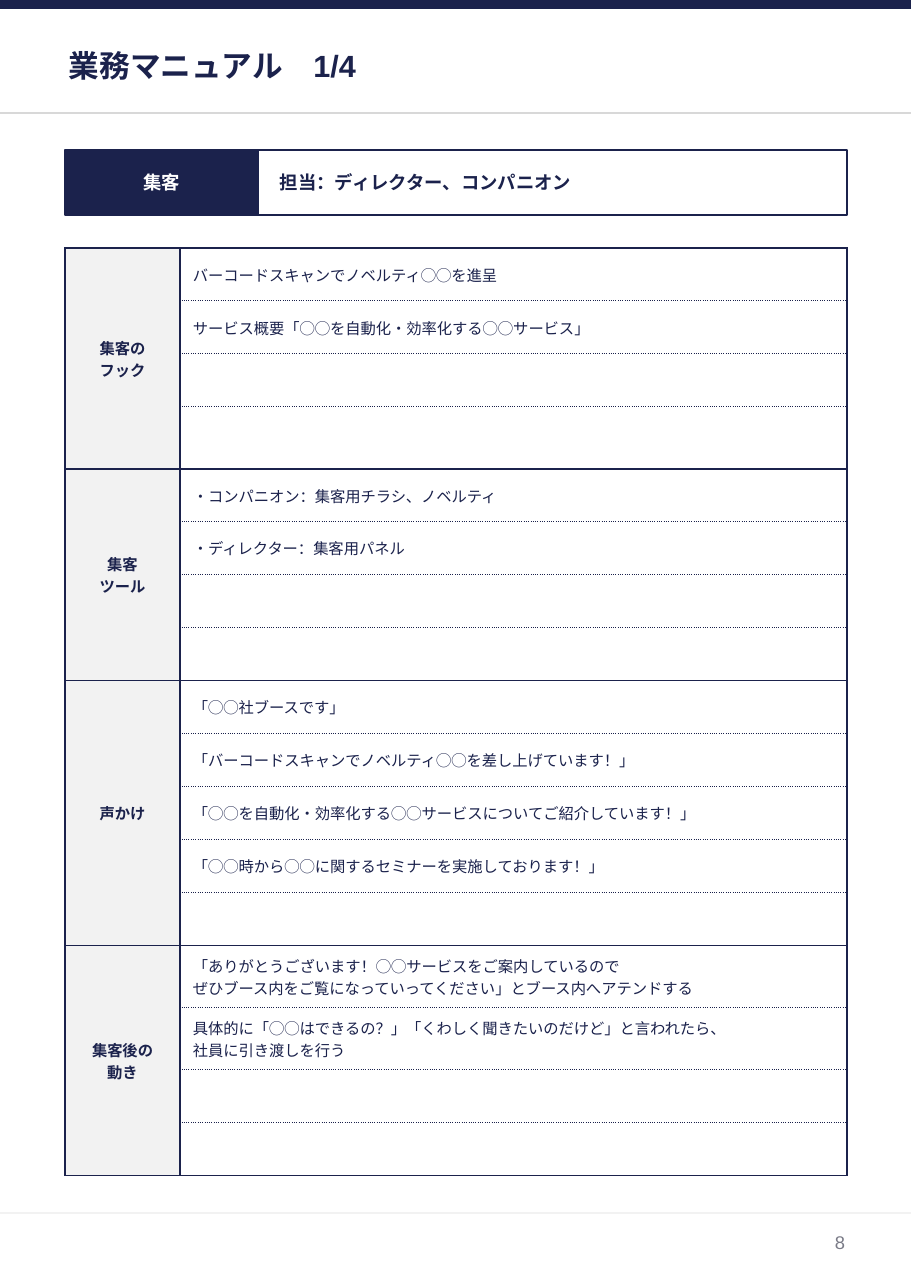
from lxml import etree
from pptx import Presentation
from pptx import util as u
from pptx.dml.color import RGBColor
from pptx.enum import shapes, text
from pptx.oxml import ns

NAVY = RGBColor(0x1B, 0x22, 0x4C)
WHITE = RGBColor(0xFF, 0xFF, 0xFF)
PALE = RGBColor(0xF2, 0xF2, 0xF2)
RULE = RGBColor(0xD8, 0xD8, 0xD8)
GREY = RGBColor(0x7A, 0x7B, 0x87)

PAGE_W, PAGE_H = 911, 1288
TITLE = "業務マニュアル　1/4"
STAGE = "集客"
STAFF = "担当：ディレクター、コンパニオン"
PAGE_NUMBER = "8"
ROW, TALL = 53, 62
SECTIONS = [
    (["集客の", "フック"], [
        (ROW, ["バーコードスキャンでノベルティ◯◯を進呈"]),
        (ROW, ["サービス概要「◯◯を自動化・効率化する◯◯サービス」"]),
        (ROW, []),
        (TALL, []),
    ]),
    (["集客", "ツール"], [
        (ROW, ["・コンパニオン：集客用チラシ、ノベルティ"]),
        (ROW, ["・ディレクター：集客用パネル"]),
        (ROW, []),
        (ROW, []),
    ]),
    (["声かけ"], [
        (ROW, ["「◯◯社ブースです」"]),
        (ROW, ["「バーコードスキャンでノベルティ◯◯を差し上げています！」"]),
        (ROW, ["「◯◯を自動化・効率化する◯◯サービスについてご紹介しています！」"]),
        (ROW, ["「◯◯時から◯◯に関するセミナーを実施しております！」"]),
        (ROW, []),
    ]),
    (["集客後の", "動き"], [
        (TALL, ["「ありがとうございます！◯◯サービスをご案内しているので",
                "ぜひブース内をご覧になっていってください」とブース内へアテンドする"]),
        (TALL, ["具体的に「◯◯はできるの？」「くわしく聞きたいのだけど」と言われたら、",
                "社員に引き渡しを行う"]),
        (ROW, []),
        (ROW, []),
    ]),
]
LEFT, TABLE_TOP = 65, 248
LABEL_W, DETAIL_W = 115, 667
BANNER_TOP, BANNER_H, STAGE_W = 150, 65, 193
BANNER_W = LABEL_W + DETAIL_W
SOLID, DOTTED = (1, "solid"), (0.75, "sysDot")


def px(length):
    return u.Emu(length * 8298)


def set_text(frame, lines, size, color, bold, align=text.PP_ALIGN.LEFT):
    for index, line in enumerate(lines or [""]):
        para = frame.paragraphs[0] if index == 0 else frame.add_paragraph()
        para.alignment = align
        target = para
        if line:
            target = para.add_run()
            target.text = line
        look = {"name": "Arial", "size": u.Pt(size), "bold": bold}
        for name, value in look.items():
            setattr(target.font, name, value)
        target.font.color.rgb = color


def set_frame(frame, inset=4):
    layout = {"word_wrap": True, "vertical_anchor": text.MSO_ANCHOR.MIDDLE,
              "margin_left": px(inset), "margin_right": px(4),
              "margin_top": px(4), "margin_bottom": px(4)}
    for name, value in layout.items():
        setattr(frame, name, value)


def add_box(page, area, fill, outline=None, inset=4):
    box = page.shapes.add_shape(shapes.MSO_SHAPE.RECTANGLE, *map(px, area))
    box.shadow.inherit = False
    box.fill.solid()
    box.fill.fore_color.rgb = fill
    if outline is None:
        box.line.fill.background()
    else:
        box.line.color.rgb = outline
        box.line.width = u.Pt(1)
    set_frame(box.text_frame, inset)
    return box


def add_label(page, area, line, size, color, bold, align):
    box = page.shapes.add_textbox(*map(px, area))
    set_frame(box.text_frame)
    set_text(box.text_frame, [line], size, color, bold, align)


def add_rule(page, top, color):
    rule = page.shapes.add_connector(shapes.MSO_CONNECTOR.STRAIGHT,
                                     0, px(top), px(PAGE_W), px(top))
    rule.line.color.rgb = color
    rule.line.width = u.Pt(0.75)
    etree.SubElement(rule._element.spPr, ns.qn("a:effectLst"))


def style_cell(cell, fill, top, bottom):
    props = cell._tc.get_or_add_tcPr()
    borders = {"lnL": SOLID, "lnR": SOLID, "lnT": top, "lnB": bottom}
    for tag, (width, dash) in borders.items():
        edge = etree.SubElement(props, ns.qn(f"a:{tag}"), w=str(u.Pt(width)))
        paint = etree.SubElement(edge, ns.qn("a:solidFill"))
        etree.SubElement(paint, ns.qn("a:srgbClr"), val=str(NAVY))
        etree.SubElement(edge, ns.qn("a:prstDash"), val=dash)
    cell.fill.solid()
    cell.fill.fore_color.rgb = fill
    layout = {"vertical_anchor": text.MSO_ANCHOR.MIDDLE,
              "margin_left": px(13), "margin_right": px(13),
              "margin_top": px(8), "margin_bottom": px(8)}
    for name, value in layout.items():
        setattr(cell, name, value)


def add_manual(page):
    heights = [height for _, rows in SECTIONS for height, _ in rows]
    area = (LEFT, TABLE_TOP, BANNER_W, sum(heights))
    table = page.shapes.add_table(len(heights), 2, *map(px, area)).table
    table.first_row = table.horz_banding = False
    for column, width in zip(table.columns, (LABEL_W, DETAIL_W)):
        column.width = px(width)
    for row, height in zip(table.rows, heights):
        row.height = px(height)
    start = 0
    for label, rows in SECTIONS:
        last = len(rows) - 1
        for index, (_, lines) in enumerate(rows):
            heading = table.cell(start + index, 0)
            detail = table.cell(start + index, 1)
            style_cell(heading, PALE, SOLID, SOLID)
            style_cell(detail, WHITE, SOLID if index == 0 else DOTTED,
                       SOLID if index == last else DOTTED)
            set_text(detail.text_frame, lines, 10, NAVY, False)
        head = table.cell(start, 0)
        head.merge(table.cell(start + last, 0))
        set_text(head.text_frame, label, 10, NAVY, True, text.PP_ALIGN.CENTER)
        start += len(rows)


def main():
    deck = Presentation()
    deck.slide_width, deck.slide_height = px(PAGE_W), px(PAGE_H)
    page = deck.slides.add_slide(deck.slide_layouts[6])

    add_box(page, (0, 0, PAGE_W, 9), NAVY)
    add_rule(page, 1213, PALE)
    add_rule(page, 113, RULE)
    add_label(page, (LEFT, 39, BANNER_W, 52), TITLE, 20, NAVY, True,
              text.PP_ALIGN.LEFT)

    staff = add_box(page, (LEFT + STAGE_W, BANNER_TOP, BANNER_W - STAGE_W, BANNER_H),
                    WHITE, NAVY, 22)
    set_text(staff.text_frame, [STAFF], 12, NAVY, True)
    stage = add_box(page, (LEFT, BANNER_TOP, STAGE_W, BANNER_H), NAVY, NAVY)
    set_text(stage.text_frame, [STAGE], 12, WHITE, True, text.PP_ALIGN.CENTER)

    add_manual(page)
    add_label(page, (644, 1225, 205, 34), PAGE_NUMBER, 12, GREY, False,
              text.PP_ALIGN.RIGHT)
    deck.save("out.pptx")


if __name__ == "__main__":
    main()
